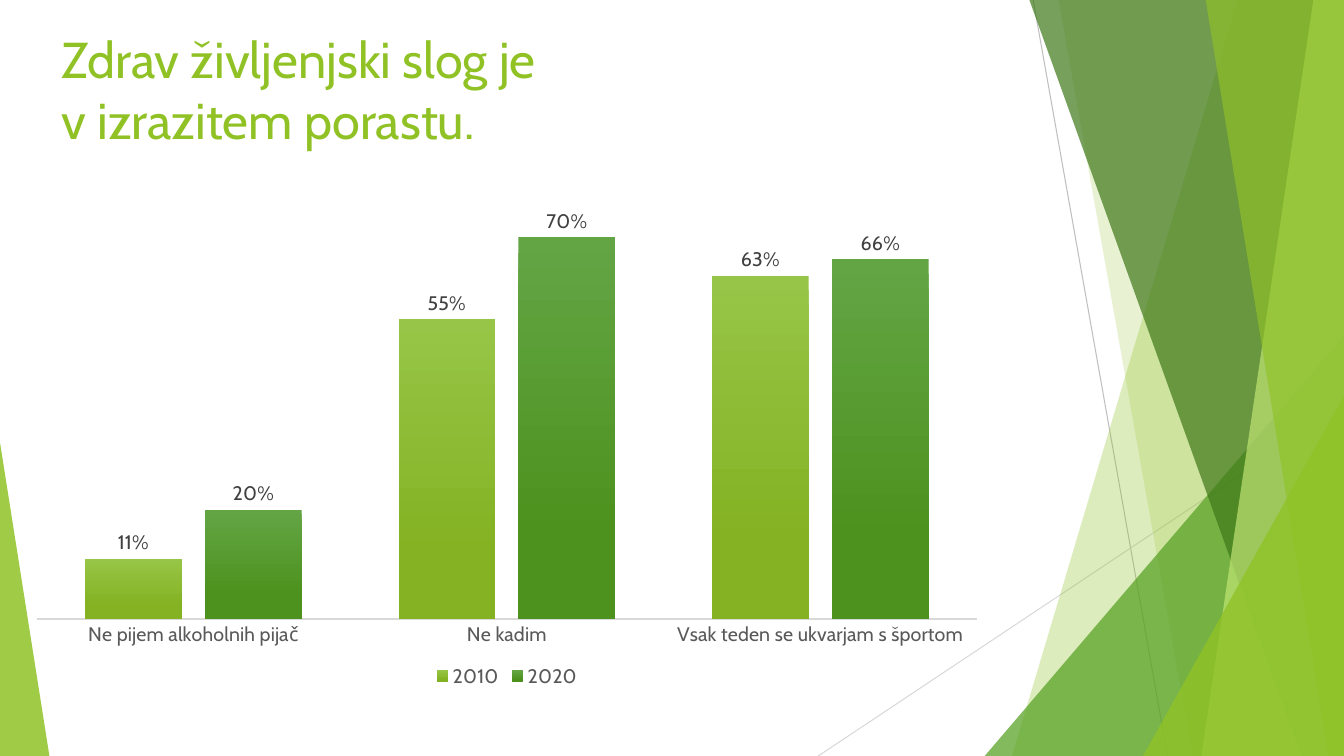
import pptx
import pptx.chart.data
import pptx.dml.color
import pptx.enum.chart
import pptx.enum.shapes
import pptx.enum.text
import pptx.oxml.ns
import pptx.oxml.xmlchemy
import pptx.util

Pt = pptx.util.Pt
WIDTH, HEIGHT = 960, 540
FONT = "Cabin"
GREEN = "90C226"


def rgb(code):
    """Return the colour for a hex string."""
    return pptx.dml.color.RGBColor.from_string(code)


def new_element(tag):
    """Create an empty XML element from a prefixed tag."""
    return pptx.oxml.xmlchemy.OxmlElement(tag)


def style_font(font, size, code):
    """Set typeface, size and colour of a font."""
    font.name, font.size, font.bold = FONT, Pt(size), False
    font.color.rgb = rgb(code)


def tint(shape, code, opacity):
    """Fill a shape with a see-through colour and no outline."""
    shape.shadow.inherit = False
    shape.line.fill.background()
    shape.fill.solid()
    shape.fill.fore_color.rgb = rgb(code)
    color = shape._element.spPr.find(".//" + pptx.oxml.ns.qn("a:srgbClr"))
    alpha = new_element("a:alpha")
    alpha.set("val", str(opacity * 1000))
    color.append(alpha)


def add_hairline(slide, start, end, code):
    """Draw a thin straight line between two points."""
    line = slide.shapes.add_connector(
        pptx.enum.shapes.MSO_CONNECTOR.STRAIGHT, *map(Pt, start + end))
    line.line.color.rgb = rgb(code)
    line.line.width = Pt(0.75)
    line._element.spPr.append(new_element("a:effectLst"))


def add_band(slide, top_x, bottom_x, code, opacity):
    """Add a full-height band from a slanted left side to the right edge."""
    builder = slide.shapes.build_freeform(Pt(top_x), Pt(-0.6))
    corners = [(WIDTH, -0.6), (WIDTH, HEIGHT), (bottom_x, HEIGHT)]
    builder.add_line_segments([(Pt(x), Pt(y)) for x, y in corners])
    tint(builder.convert_to_shape(), code, opacity)


def add_corner(slide, left, top, width, apex, code, opacity):
    """Add a right-angled triangle standing on the bottom edge."""
    triangle = slide.shapes.add_shape(
        pptx.enum.shapes.MSO_SHAPE.ISOSCELES_TRIANGLE,
        Pt(left), Pt(top), Pt(width), Pt(HEIGHT - top))
    triangle.adjustments[0] = apex
    tint(triangle, code, opacity)


def add_decoration(slide):
    """Build the green facets at both sides of the slide."""
    add_hairline(slide, (738, 0), (834, HEIGHT), "BFBFBF")
    add_hairline(slide, (WIDTH, 290), (584.5, HEIGHT), "D9D9D9")
    add_band(slide, 884.2, 722.9, GREEN, 30)
    add_band(slide, 756, 851.8, GREEN, 20)
    add_corner(slide, 703.4, 239.8, WIDTH - 703.4, 1, "54A021", 72)
    add_band(slide, 735.1, 929.5, "3F7819", 70)
    add_band(slide, 938.2, 858.2, "C0E474", 70)
    add_band(slide, 861.1, 949, GREEN, 65)
    add_corner(slide, 816.5, 283, WIDTH - 816.5, 1, GREEN, 80)
    add_corner(slide, 0, 316.1, 35.3, 0, GREEN, 85)


def add_title(slide, left, top, width, height, lines):
    """Add the heading with one line per entry."""
    frame = slide.shapes.add_textbox(*map(Pt, (left, top, width, height))).text_frame
    frame.word_wrap = True
    frame.vertical_anchor = pptx.enum.text.MSO_ANCHOR.TOP
    paragraph = frame.paragraphs[0]
    for index, text in enumerate(lines):
        if index:
            paragraph.add_line_break()
        run = paragraph.add_run()
        run.text = text
        style_font(run.font, 36, GREEN)


def place_plot(chart, **shares):
    """Fix the inner plot area as shares of the chart box."""
    layout = new_element("c:layout")
    manual = new_element("c:manualLayout")
    layout.append(manual)
    settings = {"layoutTarget": "inner", "xMode": "edge", "yMode": "edge", **shares}
    for name, value in settings.items():
        setting = new_element("c:" + name)
        setting.set("val", str(value))
        manual.append(setting)
    plot_area = chart._chartSpace.chart.plotArea
    for automatic in plot_area.findall(pptx.oxml.ns.qn("c:layout")):
        plot_area.remove(automatic)
    plot_area.insert(0, layout)


def style_series(series, stops):
    """Give a series its vertical gradient and value labels."""
    fill = series.format.fill
    fill.gradient()
    fill.gradient_angle = 270
    for stop, (position, code) in zip(fill.gradient_stops, stops):
        stop.position = position
        stop.color.rgb = rgb(code)
    labels = series.data_labels
    labels.show_value = True
    labels.number_format, labels.number_format_is_linked = "0%", False
    labels.position = pptx.enum.chart.XL_LABEL_POSITION.OUTSIDE_END
    style_font(labels.font, 14, "404040")


def add_habits_chart(slide, left, top, width, height):
    """Add the column chart comparing habits in two years."""
    data = pptx.chart.data.CategoryChartData(number_format="0%")
    data.categories = ["Ne pijem alkoholnih pijač", "Ne kadim",
                       "Vsak teden se ukvarjam s športom"]
    data.add_series("2010", [0.11, 0.55, 0.63])
    data.add_series("2020", [0.2, 0.7, 0.66])
    chart = slide.shapes.add_chart(
        pptx.enum.chart.XL_CHART_TYPE.COLUMN_CLUSTERED,
        *map(Pt, (left, top, width, height)), data).chart
    style_font(chart.font, 14, "595959")
    chart.has_title = False
    chart.has_legend = True
    chart.legend.position = pptx.enum.chart.XL_LEGEND_POSITION.BOTTOM
    chart.legend.include_in_layout = False
    style_font(chart.legend.font, 14, "595959")

    values = chart.value_axis
    values.visible = values.has_major_gridlines = False
    values.minimum_scale, values.maximum_scale = 0, 0.8
    habits = chart.category_axis
    habits.major_tick_mark = pptx.enum.chart.XL_TICK_MARK.NONE
    habits.format.line.color.rgb = rgb("D9D9D9")
    habits.format.line.width = Pt(1)
    style_font(habits.tick_labels.font, 14, "595959")

    plot = chart.plots[0]
    plot.gap_width, plot.overlap, plot.vary_by_categories = 100, -24, False
    gradients = [[(0, "97C547"), (0.78, "84B223")],
                 [(0, "63A545"), (0.78, "4D921E")]]
    for series, stops in zip(plot.series, gradients):
        style_series(series, stops)
    place_plot(chart, x=0.02, y=0.03, w=0.96, h=0.83)


def main():
    """Build the slide and save it."""
    presentation = pptx.Presentation()
    presentation.slide_width, presentation.slide_height = Pt(WIDTH), Pt(HEIGHT)
    slide = presentation.slides.add_slide(presentation.slide_layouts[6])
    add_decoration(slide)
    add_title(slide, 36.7, 16.6, 683.3, 108.7,
              ["Zdrav življenjski slog je ", "v izrazitem porastu."])
    add_habits_chart(slide, 12.2, 119.5, 699.8, 375.1)
    presentation.save("out.pptx")


if __name__ == "__main__":
    main()
